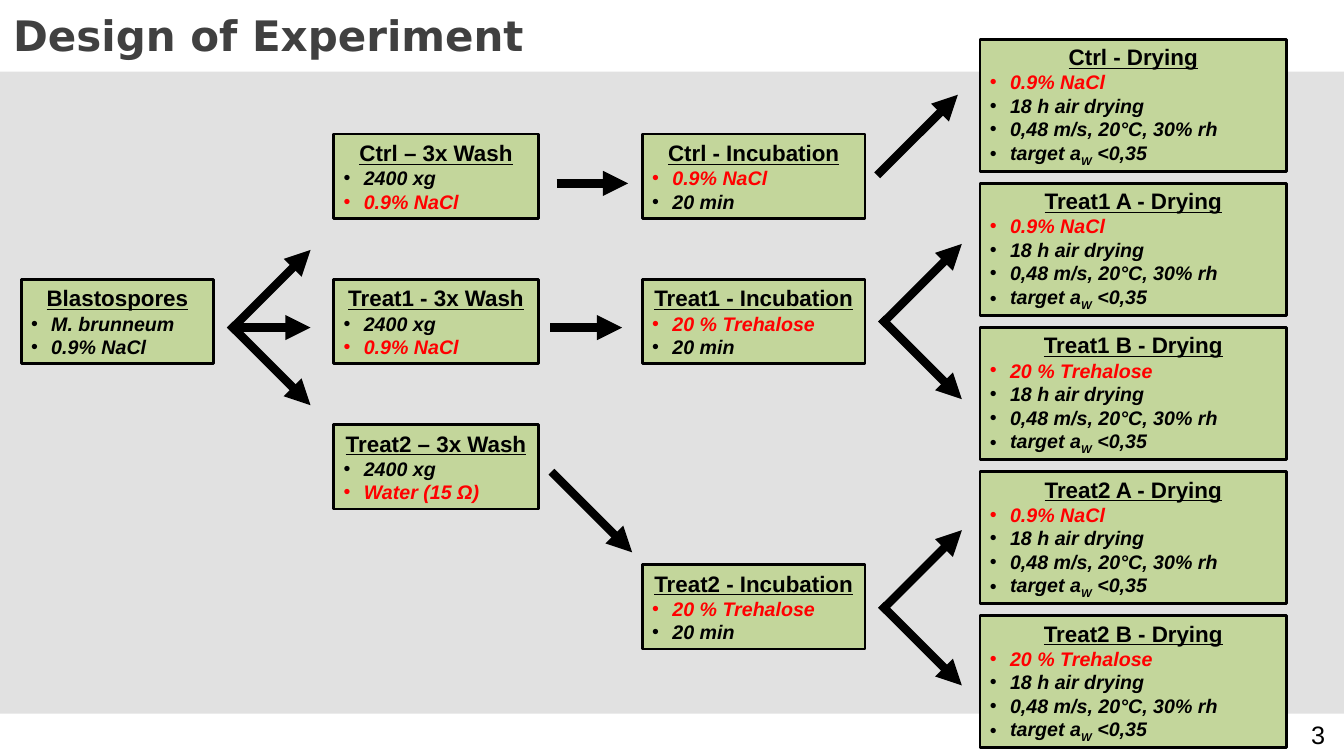
from collections import namedtuple

from lxml.etree import SubElement
from pptx import Presentation
from pptx.dml.color import RGBColor
from pptx.enum.shapes import MSO_CONNECTOR as Link, MSO_SHAPE as Shape
from pptx.enum.text import MSO_ANCHOR as Anchor, PP_ALIGN as Align
from pptx.oxml.ns import qn
from pptx.util import Inches, Pt

BLACK = RGBColor(0x00, 0x00, 0x00)
RED = RGBColor(0xFF, 0x00, 0x00)
GREEN = RGBColor(0xC3, 0xD6, 0x9B)
GREY = RGBColor(0xD9, 0xD9, 0xD9)
DARK = RGBColor(0x40, 0x40, 0x40)

Box = namedtuple("Box", "left top width height")
PAGE = Box(0, 0, 13.33, 7.5)

# Grid: left and width of each column, top and pitch of its rows
START = (0.21, 1.91)
WASH = (3.31, 2.03)
INCUB = (6.37, 2.21)
DRY = (9.72, 3.04)
TOP, STEP, LOW = 1.33, 1.44, 0.84
DRY_TOP, DRY_STEP, TALL = 0.39, 1.43, 1.31
INCUB_LAST = 5.6
DIAG, FLAT = 0.8, 0.71

SALT, SUGAR = "0.9% NaCl", "20 % Trehalose"


def inch(box):
    return [Inches(n) for n in box]


def write(par, text, font="Arial", size=14, color=BLACK, bold=False,
          italic=False, line=False, base=0):
    """Add one formatted run to a paragraph."""
    run = par.add_run()
    run.text = text
    face = run.font
    face.name, face.size = font, Pt(size)
    face.bold, face.italic, face.underline = bold, italic, line
    face.color.rgb = color
    if base:
        run._r.get_or_add_rPr().set("baseline", str(base * 1000))


def bullet(par):
    props = par._p.get_or_add_pPr()
    props.set("marL", str(Inches(0.2)))
    props.set("indent", str(-Inches(0.2)))
    SubElement(props, qn("a:buFont")).set("typeface", "Arial")
    SubElement(props, qn("a:buChar")).set("char", "•")


def card(slide, box, title, items):
    """Green box with a heading and bulleted (text, colour) items."""
    shape = slide.shapes.add_shape(Shape.RECTANGLE, *inch(box))
    shape.shadow.inherit = False
    shape.fill.solid()
    shape.fill.fore_color.rgb = GREEN
    shape.line.color.rgb = BLACK
    shape.line.width = Pt(2)
    frame = shape.text_frame
    frame.word_wrap = True
    frame.vertical_anchor = Anchor.MIDDLE
    head = frame.paragraphs[0]
    head.alignment = Align.CENTER
    write(head, title, size=16, bold=True, line=True)
    for text, color in items:
        par = frame.add_paragraph()
        par.alignment = Align.LEFT
        bullet(par)
        # An underscore marks the subscript letter
        main, mark, rest = text.partition("_")
        write(par, main, color=color, bold=True, italic=True)
        if mark:
            write(par, rest[0], color=color, bold=True, italic=True, base=-25)
            write(par, rest[1:], color=color, bold=True, italic=True)


def arrow(slide, x, y, dx, dy=0):
    ends = inch((x, y, x + dx, y + dy))
    link = slide.shapes.add_connector(Link.STRAIGHT, *ends)
    link.line.color.rgb = BLACK
    link.line.width = Pt(6)
    SubElement(link.line._get_or_add_ln(), qn("a:tailEnd")).set("type", "triangle")
    SubElement(link._element.spPr, qn("a:effectLst"))


def fork(slide, x, y):
    """Two diagonal arrows that cross a little at their start."""
    for way in (-1, 1):
        arrow(slide, x, y - way * 0.03, DIAG, way * DIAG)


def frame_page(slide, page):
    """Title, grey band and page number."""
    title = slide.shapes.title
    title.left, title.top, title.width, title.height = inch((0.03, 0.03, 10.97, 0.63))
    title.text_frame.vertical_anchor = Anchor.MIDDLE
    par = title.text_frame.paragraphs[0]
    par.alignment = Align.LEFT
    write(par, "Design of Experiment", font="DejaVu Sans", size=30,
          color=DARK, bold=True)

    band = slide.shapes.add_shape(
        Shape.RECTANGLE, *inch((0, 0.71, page.width, 6.37)))
    band.shadow.inherit = False
    band.fill.solid()
    band.fill.fore_color.rgb = GREY
    tint = band._element.spPr.find(qn("a:solidFill"))[0]
    SubElement(tint, qn("a:alpha")).set("val", "78000")
    band.line.fill.background()

    note = slide.shapes.add_textbox(*inch((12.73, 7.09, 0.51, 0.4)))
    note.text_frame.word_wrap = True
    par = note.text_frame.paragraphs[0]
    par.alignment = Align.RIGHT
    write(par, "3", size=18)


def wash(slide, col):
    rows = [("Ctrl – 3x Wash", SALT), ("Treat1 - 3x Wash", SALT),
            ("Treat2 – 3x Wash", "Water (15 Ω)")]
    left, width = col
    for row, (title, fluid) in enumerate(rows):
        card(slide, Box(left, TOP + row * STEP, width, LOW), title,
             [("2400 xg", BLACK), (fluid, RED)])


def incubate(slide, col):
    rows = [("Ctrl", SALT, TOP), ("Treat1", SUGAR, TOP + STEP),
            ("Treat2", SUGAR, INCUB_LAST)]
    left, width = col
    for group, fluid, top in rows:
        card(slide, Box(left, top, width, LOW), f"{group} - Incubation",
             [(fluid, RED), ("20 min", BLACK)])


def dry(slide, col):
    rows = [("Ctrl", SALT), ("Treat1 A", SALT), ("Treat1 B", SUGAR),
            ("Treat2 A", SALT), ("Treat2 B", SUGAR)]
    shared = ["18 h air drying", "0,48 m/s, 20°C, 30% rh", "target a_W <0,35"]
    left, width = col
    for row, (group, fluid) in enumerate(rows):
        card(slide, Box(left, DRY_TOP + row * DRY_STEP, width, TALL),
             f"{group} - Drying",
             [(fluid, RED)] + [(text, BLACK) for text in shared])


def flow(slide):
    """Arrows between the columns."""
    mid = 3.25
    fork(slide, 2.28, mid)
    arrow(slide, 2.37, mid, FLAT)
    arrow(slide, 5.52, 1.82, FLAT)
    arrow(slide, 5.46, mid, FLAT)
    arrow(slide, 5.47, 4.68, DIAG, DIAG)
    arrow(slide, 8.7, 1.74, DIAG, -DIAG)
    for y in (3.19, 6.03):
        fork(slide, 8.74, y)


def main():
    deck = Presentation()
    deck.slide_width, deck.slide_height = Inches(PAGE.width), Inches(PAGE.height)
    slide = deck.slides.add_slide(deck.slide_layouts[5])
    frame_page(slide, PAGE)
    left, width = START
    card(slide, Box(left, TOP + STEP, width, LOW), "Blastospores",
         [("M. brunneum", BLACK), (SALT, BLACK)])
    wash(slide, WASH)
    incubate(slide, INCUB)
    dry(slide, DRY)
    flow(slide)
    deck.save("out.pptx")


if __name__ == "__main__":
    main()
